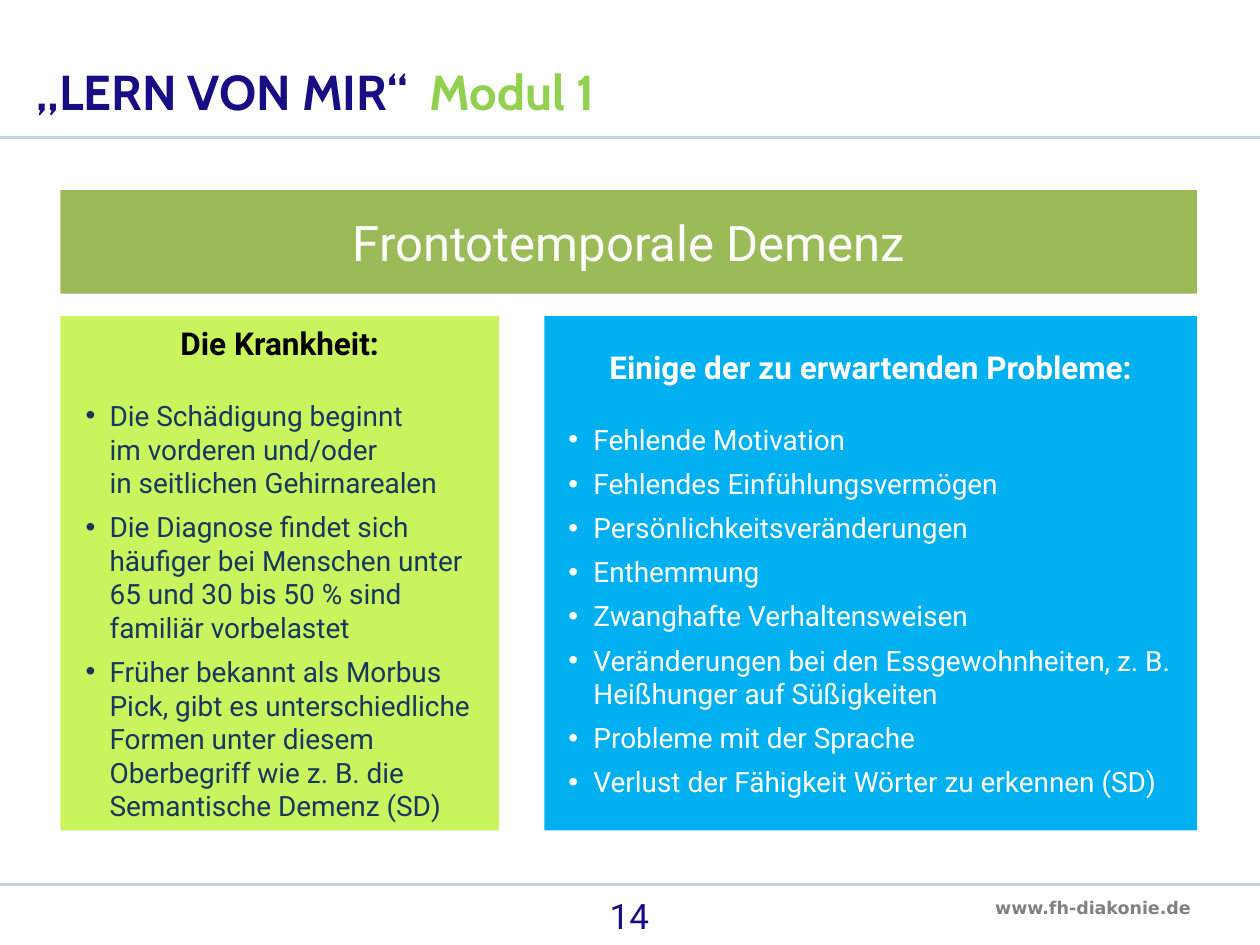
from pptx import Presentation
from pptx.dml.color import RGBColor
from pptx.enum.shapes import MSO_CONNECTOR, MSO_SHAPE
from pptx.enum.text import MSO_ANCHOR, MSO_AUTO_SIZE, PP_ALIGN
from pptx.oxml.ns import qn
from pptx.util import Inches, Pt
from lxml.etree import SubElement

COLORS = {
    "navy": "170E83", "leaf": "92D050", "olive": "9BBB59", "lime": "C9F45E",
    "sky": "00B0F0", "slate": "17375E", "rule": "C8D2DC", "gray": "808080",
    "black": "000000", "white": "FFFFFF",
}
DISEASE = [
    "Die Schädigung beginnt\nim vorderen und/oder\nin seitlichen Gehirnarealen",
    "Die Diagnose findet sich häufiger bei Menschen unter 65 und 30 bis 50 % "
    "sind familiär vorbelastet",
    "Früher bekannt als Morbus Pick, gibt es unterschiedliche Formen unter diesem "
    "Oberbegriff wie z. B. die Semantische Demenz (SD)",
]
PROBLEMS = [
    "Fehlende Motivation",
    "Fehlendes Einfühlungsvermögen",
    "Persönlichkeitsveränderungen",
    "Enthemmung",
    "Zwanghafte Verhaltensweisen",
    "Veränderungen bei den Essgewohnheiten, z. B. Heißhunger auf Süßigkeiten",
    "Probleme mit der Sprache",
    "Verlust der Fähigkeit Wörter zu erkennen (SD)",
]


def rgb(name):
    """Return the named colour."""
    return RGBColor.from_string(COLORS[name])


def write(p, text, size=16, color="black", bold=False, font="Roboto",
          align=PP_ALIGN.LEFT, after=0):
    """Add formatted text to a paragraph, breaking lines at newlines."""
    p.alignment = align
    p.space_before, p.space_after = Pt(0), Pt(after)
    for i, line in enumerate(text.split("\n")):
        if i:
            p.add_line_break()
        r = p.add_run()
        r.text = line
        r.font.size, r.font.bold, r.font.name = Pt(size), bold, font
        r.font.color.rgb = rgb(color)


def place(sp, left, top, width, height):
    """Move and size a shape in inches."""
    sp.left, sp.top = Inches(left), Inches(top)
    sp.width, sp.height = Inches(width), Inches(height)


def set_bullet(p, left=0.0, hang=0.0, char=None):
    """Set the indent and the bullet of a paragraph."""
    pPr = p._p.get_or_add_pPr()
    pPr.set("marL", str(Inches(left)))
    pPr.set("indent", str(Inches(-hang)))
    if char:
        SubElement(pPr, qn("a:buChar"), char=char)
    else:
        SubElement(pPr, qn("a:buNone"))


def add_rule(s, y):
    """Draw a full-width horizontal line."""
    line = s.shapes.add_connector(MSO_CONNECTOR.STRAIGHT, 0, Inches(y),
                                  Inches(10), Inches(y))
    line.line.color.rgb, line.line.width = rgb("rule"), Pt(1.5)
    SubElement(line._element.spPr, qn("a:effectLst"))


def add_text(s, box, text, wrap=True, **fmt):
    """Add a text box with one paragraph."""
    sp = s.shapes.add_textbox(*map(Inches, box))
    sp.text_frame.word_wrap = wrap
    write(sp.text_frame.paragraphs[0], text, **fmt)


def add_banner(s, box, fill, text, **fmt):
    """Add a filled rectangle with centred text."""
    sp = s.shapes.add_shape(MSO_SHAPE.RECTANGLE, *map(Inches, box))
    sp.shadow.inherit = False
    sp.fill.solid()
    sp.fill.fore_color.rgb = rgb(fill)
    sp.line.fill.background()
    sp.text_frame.vertical_anchor = MSO_ANCHOR.MIDDLE
    write(sp.text_frame.paragraphs[0], text, align=PP_ALIGN.CENTER, **fmt)


def fill_title(sp):
    """Write the two-coloured title."""
    place(sp, 0.19, 0.43, 6.67, 0.58)
    tf = sp.text_frame
    tf.auto_size, tf.vertical_anchor = MSO_AUTO_SIZE.NONE, MSO_ANCHOR.BOTTOM
    p = tf.paragraphs[0]
    tabs = SubElement(p._p.get_or_add_pPr(), qn("a:tabLst"))
    SubElement(tabs, qn("a:tab"), pos=str(Inches(3.12)), algn="l")
    p.line_spacing = 0.9
    style = dict(size=28, bold=True, font="Cabin")
    write(p, "„LERN VON MIR“\t", color="navy", **style)
    write(p, "Modul 1", color="leaf", **style)


def fill_panel(sp, box, fill, heading, items, head_color, item_color, hang):
    """Turn a body placeholder into a filled panel with heading and bullets."""
    place(sp, *box)
    sp.fill.solid()
    sp.fill.fore_color.rgb = rgb(fill)
    tf = sp.text_frame
    tf.auto_size, tf.vertical_anchor = MSO_AUTO_SIZE.NONE, MSO_ANCHOR.MIDDLE
    p = tf.paragraphs[0]
    set_bullet(p)
    write(p, heading, size=18, color=head_color, bold=True,
          align=PP_ALIGN.CENTER, after=21)
    for item in items:
        p = tf.add_paragraph()
        set_bullet(p, 0.29, hang, "•")
        write(p, item, color=item_color, after=6)


def main():
    """Build and save the slide."""
    prs = Presentation()
    prs.slide_width, prs.slide_height = Inches(10), Inches(7.5)
    s = prs.slides.add_slide(prs.slide_layouts[3])
    for y in (1.09, 7.02):
        add_rule(s, y)
    title, left, right = s.placeholders
    fill_title(title)
    add_banner(s, (0.48, 1.51, 9.02, 0.82), "olive", "Frontotemporale Demenz",
               size=28, color="white")
    fill_panel(left, (0.48, 2.51, 3.48, 4.08), "lime", "Die Krankheit:",
               DISEASE, "black", "slate", 0.19)
    fill_panel(right, (4.32, 2.51, 5.18, 4.08), "sky",
               "Einige der zu erwartenden Probleme:", PROBLEMS, "white", "white", 0.2)
    add_text(s, (3.83, 7.05, 2.33, 0.45), "14", size=20, color="navy",
             align=PP_ALIGN.CENTER)
    add_text(s, (7.8, 7.07, 1.78, 0.27), "www.fh-diakonie.de", wrap=False,
             size=10, color="gray", bold=True, font="DejaVu Sans")
    prs.save("out.pptx")


if __name__ == "__main__":
    main()
